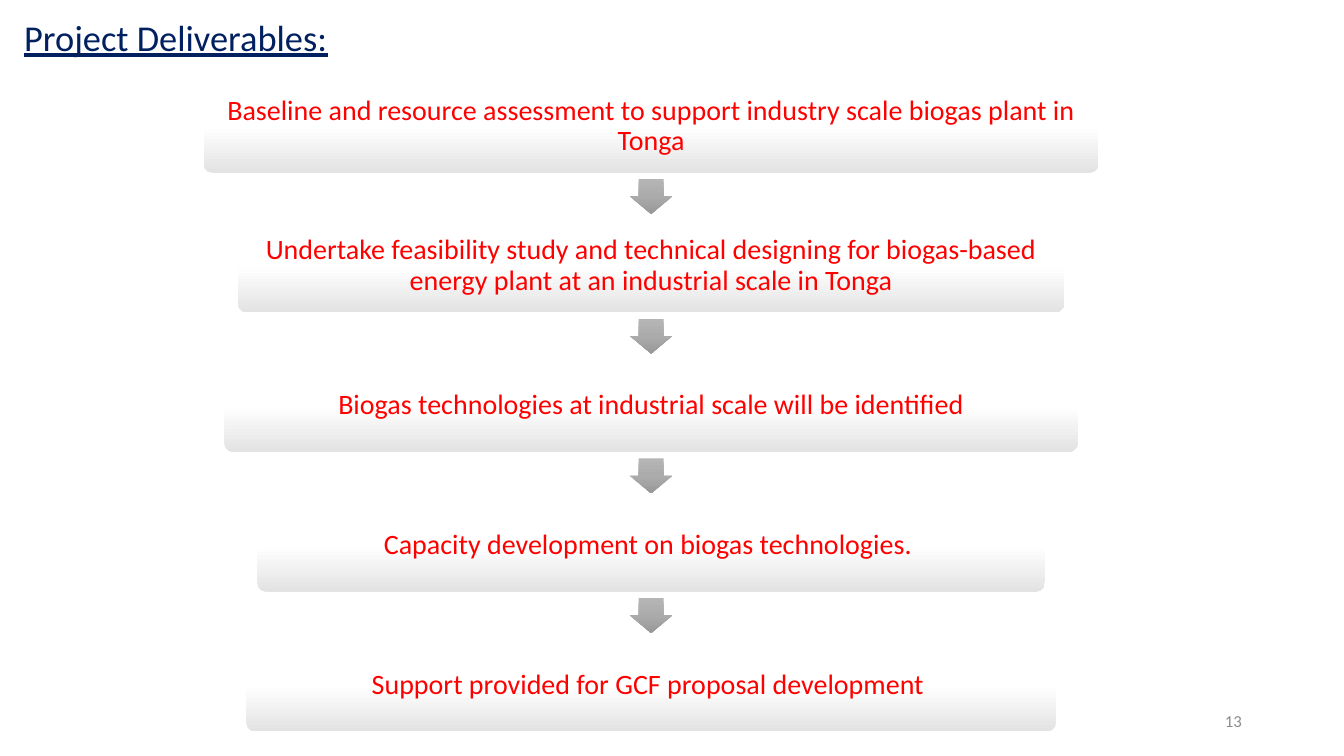
from copy import deepcopy

from pptx import Presentation
from pptx.dml.color import RGBColor
from pptx.enum.shapes import MSO_SHAPE
from pptx.enum.text import MSO_ANCHOR, PP_ALIGN
from pptx.oxml.ns import qn
from pptx.util import Cm, Pt

ROUNDED = MSO_SHAPE.ROUNDED_RECTANGLE
DOWN_ARROW = MSO_SHAPE.DOWN_ARROW
TOP, MIDDLE = MSO_ANCHOR.TOP, MSO_ANCHOR.MIDDLE
LEFT, CENTER, RIGHT = PP_ALIGN.LEFT, PP_ALIGN.CENTER, PP_ALIGN.RIGHT

COLORS = {"title": "002060", "step": "FF0000", "number": "8C8C8C"}
STEP_GRADIENT = [(0, "FFFFFF"), (0.5, "FFFFFF"), (1, "E3E3E3")]
ARROW_GRADIENT = [(0, "B5B5B5"), (0.5, "ABABAB"), (1, "989898")]

# Wording and box width in cm
STEPS = [
    ("Baseline and resource assessment to support industry scale biogas plant in Tonga", 22.56),
    ("Undertake feasibility study and technical designing for biogas-based "
     "energy plant at an industrial scale in Tonga", 20.83),
    ("Biogas technologies at industrial scale will be identified", 21.51),
    ("Capacity development on biogas technologies. ", 19.84),
    ("Support provided for GCF proposal development ", 20.4),
]
CENTER_X, FIRST_TOP, STEP_PITCH, STEP_HEIGHT = 16.41, 2.01, 3.52, 2.34
ARROW_WIDTH, ARROW_HEIGHT, ARROW_GAP = 1.06, 0.88, 0.16


class SlideBuilder:
    def __init__(self, page, font="Calibri"):
        self.page = page
        self.font = font

    def fill_text(self, shape, text, color, size, align, anchor, underline=None, paragraph=None):
        frame = shape.text_frame
        frame.word_wrap = True
        frame.vertical_anchor = anchor
        para = frame.paragraphs[0]
        para.alignment = align
        for name, value in (paragraph or {}).items():
            setattr(para, name, value)
        span = para.add_run()
        span.text = text
        span.font.color.rgb = RGBColor.from_string(COLORS[color])
        formats = {"name": self.font, "size": Pt(size), "underline": underline}
        for name, value in formats.items():
            setattr(span.font, name, value)

    def text_box(self, left, top, width, height, text, **style):
        box = self.page.shapes.add_textbox(Cm(left), Cm(top), Cm(width), Cm(height))
        self.fill_text(box, text, **style)

    def gradient_shape(self, kind, top, width, height, stops, adjustments):
        """Add a borderless shape on the flow's centre line, shaded downwards."""
        shape = self.page.shapes.add_shape(
            kind, Cm(CENTER_X - width / 2), Cm(top), Cm(width), Cm(height))
        shape.shadow.inherit = False
        shape.line.fill.background()
        for index, value in enumerate(adjustments):
            shape.adjustments[index] = value
        shape.fill.gradient()
        shape.fill.gradient_angle = 270
        stop_list = shape.element.spPr.find(qn("a:gradFill")).find(qn("a:gsLst"))
        stop_list.append(deepcopy(stop_list[-1]))
        for stop, (position, color) in zip(shape.fill.gradient_stops, stops):
            stop.position = position
            stop.color.rgb = RGBColor.from_string(color)
        return shape

    def step(self, top, width, text):
        box = self.gradient_shape(ROUNDED, top, width, STEP_HEIGHT, STEP_GRADIENT, [0.1])
        for side in ("left", "top", "right", "bottom"):
            setattr(box.text_frame, f"margin_{side}", Cm(0.21))
        self.fill_text(box, text, color="step", size=20, align=CENTER, anchor=MIDDLE,
                       paragraph={"line_spacing": 0.9, "space_after": Pt(7)})

    def arrow(self, top):
        self.gradient_shape(DOWN_ARROW, top, ARROW_WIDTH, ARROW_HEIGHT,
                            ARROW_GRADIENT, [0.6, 0.5])


def main():
    deck = Presentation()
    deck.slide_width, deck.slide_height = Cm(33.87), Cm(19.05)
    builder = SlideBuilder(deck.slides.add_slide(deck.slide_layouts[6]))

    builder.text_box(0.36, 0.25, 32.56, 3.84, "Project Deliverables:", color="title",
                     size=26, align=LEFT, anchor=TOP, underline=True)
    for index, (text, width) in enumerate(STEPS):
        top = FIRST_TOP + index * STEP_PITCH
        builder.step(top, width, text)
        if index < len(STEPS) - 1:
            builder.arrow(top + STEP_HEIGHT + ARROW_GAP)
    builder.text_box(23.93, 17.65, 7.62, 1.02, "13", color="number",
                     size=12, align=RIGHT, anchor=MIDDLE)

    deck.save("out.pptx")


if __name__ == "__main__":
    main()
